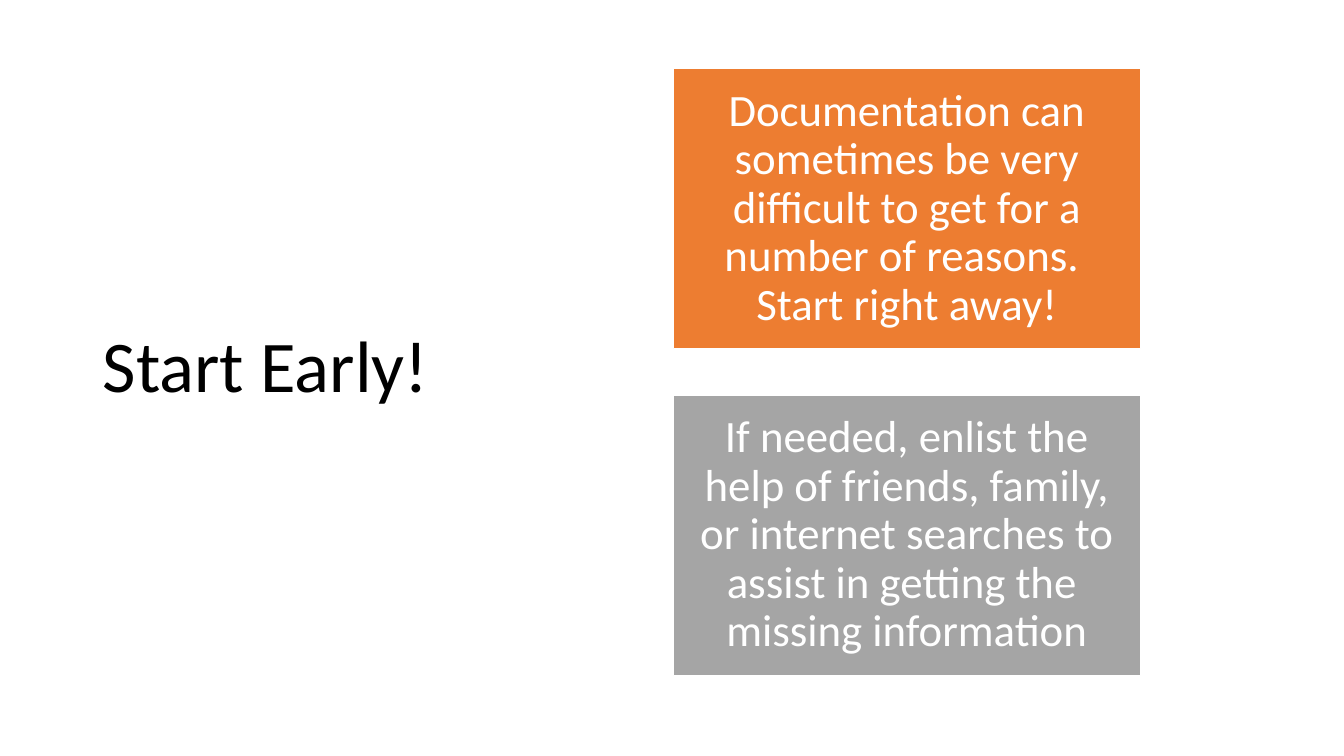
from pptx import Presentation
from pptx.dml.color import RGBColor
from pptx.enum.shapes import MSO_SHAPE
from pptx.enum.text import MSO_ANCHOR, PP_ALIGN
from pptx.util import Inches, Pt

BLACK = RGBColor(0x00, 0x00, 0x00)
WHITE = RGBColor(0xFF, 0xFF, 0xFF)
ORANGE = RGBColor(0xED, 0x7D, 0x31)
GRAY = RGBColor(0xA5, 0xA5, 0xA5)
FONT = "Calibri"

HEADING = "Start Early!"
TIPS = [
    ("Documentation can sometimes be very difficult to get for a number of reasons.  Start right away!", ORANGE),
    ("If needed, enlist the help of friends, family, or internet searches to assist in getting the  missing information", GRAY),
]

TIP_LEFT, TIP_TOP = 6.68, 0.68
TIP_WIDTH, TIP_HEIGHT, TIP_GAP = 4.63, 2.78, 0.46
TIP_INSET = Inches(0.13)


def write(frame, text, size, color, alignment):
    frame.word_wrap = True
    frame.vertical_anchor = MSO_ANCHOR.MIDDLE
    frame.text = text
    paragraph = frame.paragraphs[0]
    paragraph.alignment = alignment
    paragraph.line_spacing = 0.9
    paragraph.font.name = FONT
    paragraph.font.size = Pt(size)
    paragraph.font.color.rgb = color


def add_tip(slide, row, text, color):
    top = TIP_TOP + row * (TIP_HEIGHT + TIP_GAP)
    tip = slide.shapes.add_shape(
        MSO_SHAPE.RECTANGLE,
        Inches(TIP_LEFT), Inches(top), Inches(TIP_WIDTH), Inches(TIP_HEIGHT),
    )
    tip.shadow.inherit = False
    tip.fill.solid()
    tip.fill.fore_color.rgb = color
    tip.line.color.rgb = WHITE
    tip.line.width = Pt(1)
    frame = tip.text_frame
    frame.margin_left = frame.margin_right = TIP_INSET
    frame.margin_top = frame.margin_bottom = TIP_INSET
    write(frame, text, 32, WHITE, PP_ALIGN.CENTER)


def main():
    deck = Presentation()
    deck.slide_width, deck.slide_height = Inches(13.33), Inches(7.5)
    slide = deck.slides.add_slide(deck.slide_layouts[5])

    heading = slide.shapes.title
    heading.left, heading.top = Inches(0.92), Inches(0.61)
    heading.width, heading.height = Inches(3.69), Inches(6.09)
    write(heading.text_frame, HEADING, 52, BLACK, PP_ALIGN.LEFT)

    for row, (text, color) in enumerate(TIPS):
        add_tip(slide, row, text, color)

    deck.save("out.pptx")


if __name__ == "__main__":
    main()
